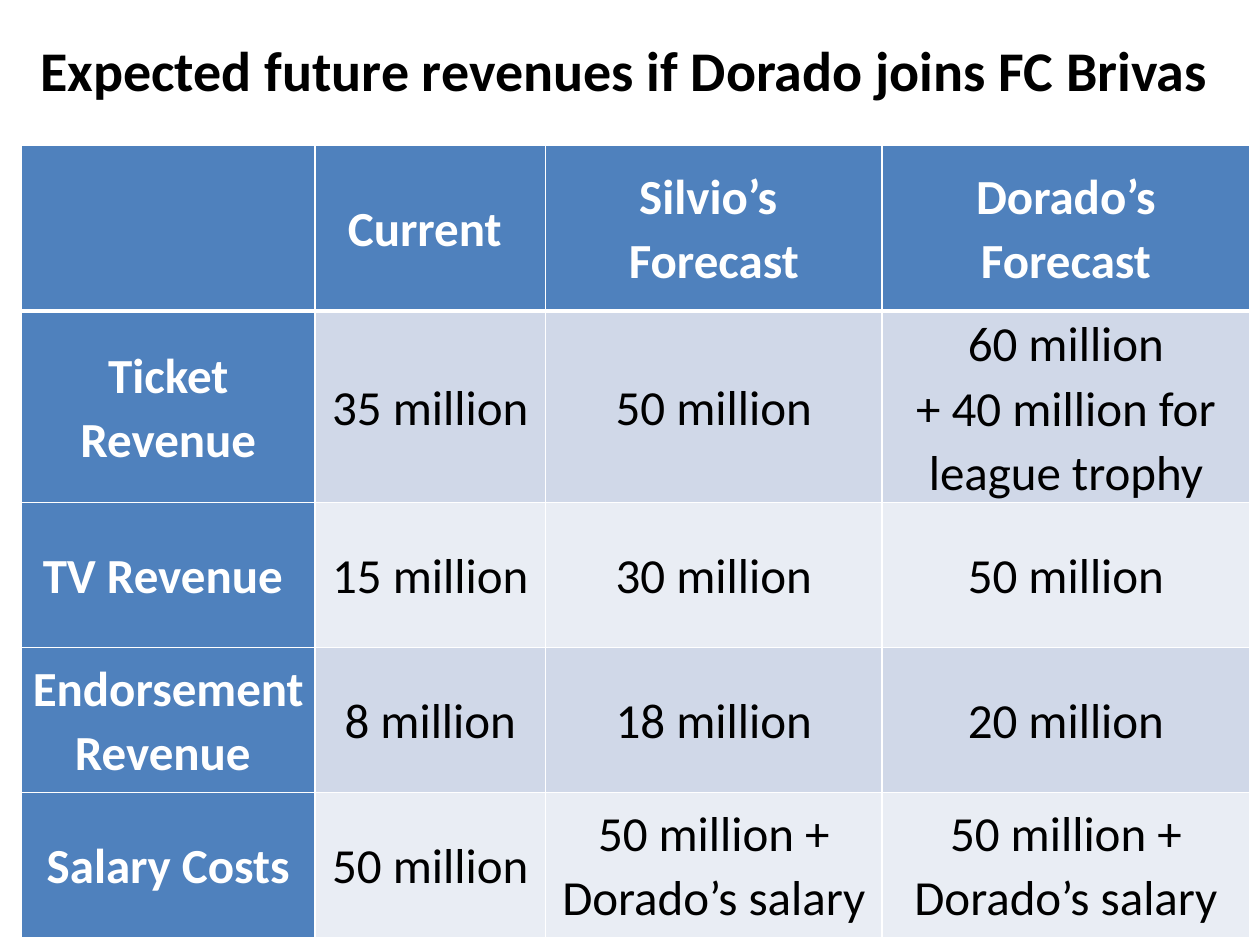
from lxml import etree
from pptx import Presentation
from pptx.dml.color import RGBColor
from pptx.enum import text
from pptx.oxml.ns import qn
from pptx.util import Inches, Pt

TITLE = "Expected future revenues if Dorado joins FC Brivas"
ROWS = [
    ["", "Current ", "Silvio’s \nForecast", "Dorado’s Forecast"],
    ["Ticket Revenue", "35 million", "50 million",
     "60 million\n+ 40 million for league trophy"],
    ["TV Revenue ", "15 million", "30 million", "50 million"],
    ["Endorsement Revenue ", "8 million", "18 million", "20 million"],
    ["Salary Costs", "50 million", "50 million + Dorado’s salary",
     "50 million + Dorado’s salary"],
]
COL_WIDTHS = [2.33, 1.83, 2.67, 2.92]
ROW_HEIGHTS = [1.32, 1.52] + [1.15] * 3
THEME = {
    "font": "Calibri", "title_size": 32, "cell_size": 28,
    "title": "000000", "body": "000000", "head": "FFFFFF",
    "head_fill": "4F81BD", "bands": ["E9EDF4", "D0D8E8"],
    "rule": "FFFFFF", "thin": 1, "thick": 3,
}


def write(tf, content, size, color, bold, spacing=None):
    tf.word_wrap = True
    for i, line in enumerate(content.split("\n")):
        p = tf.add_paragraph() if i else tf.paragraphs[0]
        p.alignment = text.PP_ALIGN.CENTER
        p.line_spacing = spacing
        if not line:
            p.font.size = Pt(size)
            continue
        r = p.add_run()
        r.text = line
        r.font.name = THEME["font"]
        r.font.size = Pt(size)
        r.font.bold = bold
        r.font.color.rgb = RGBColor.from_string(color)


def set_borders(cell, top, bottom):
    tc_pr = cell._tc.get_or_add_tcPr()
    widths = {"lnL": THEME["thin"], "lnR": THEME["thin"], "lnT": top, "lnB": bottom}
    for i, (tag, width) in enumerate(widths.items()):
        ln = etree.Element(qn("a:" + tag), w=str(Pt(width)))
        fill = etree.SubElement(ln, qn("a:solidFill"))
        etree.SubElement(fill, qn("a:srgbClr"), val=THEME["rule"])
        tc_pr.insert(i, ln)


def style_cell(cell, row, col, content):
    head = row == 0 or col == 0
    cell.fill.solid()
    cell.fill.fore_color.rgb = RGBColor.from_string(
        THEME["head_fill"] if head else THEME["bands"][row % 2])
    cell.vertical_anchor = text.MSO_ANCHOR.MIDDLE
    cell.margin_left = cell.margin_right = Inches(0.07)
    cell.margin_top = cell.margin_bottom = 0
    write(cell.text_frame, content, THEME["cell_size"],
          THEME["head"] if head else THEME["body"], head, 1.07)
    set_borders(cell, THEME["thick"] if row == 1 else THEME["thin"],
                THEME["thick"] if row == 0 else THEME["thin"])


def main():
    prs = Presentation()
    prs.slide_width, prs.slide_height = Inches(10), Inches(7.5)
    s = prs.slides.add_slide(prs.slide_layouts[6])

    title = s.shapes.add_textbox(Inches(0.08), Inches(-0.08), Inches(9.75), Inches(1.25))
    title.text_frame.vertical_anchor = text.MSO_ANCHOR.MIDDLE
    write(title.text_frame, TITLE, THEME["title_size"], THEME["title"], True)

    table = s.shapes.add_table(
        len(ROWS), len(COL_WIDTHS), Inches(0.17), Inches(1.15),
        Inches(sum(COL_WIDTHS)), Inches(sum(ROW_HEIGHTS))).table
    for column, width in zip(table.columns, COL_WIDTHS):
        column.width = Inches(width)
    for table_row, height in zip(table.rows, ROW_HEIGHTS):
        table_row.height = Inches(height)
    for row, values in enumerate(ROWS):
        for col, content in enumerate(values):
            style_cell(table.cell(row, col), row, col, content)

    prs.save("out.pptx")


if __name__ == "__main__":
    main()
